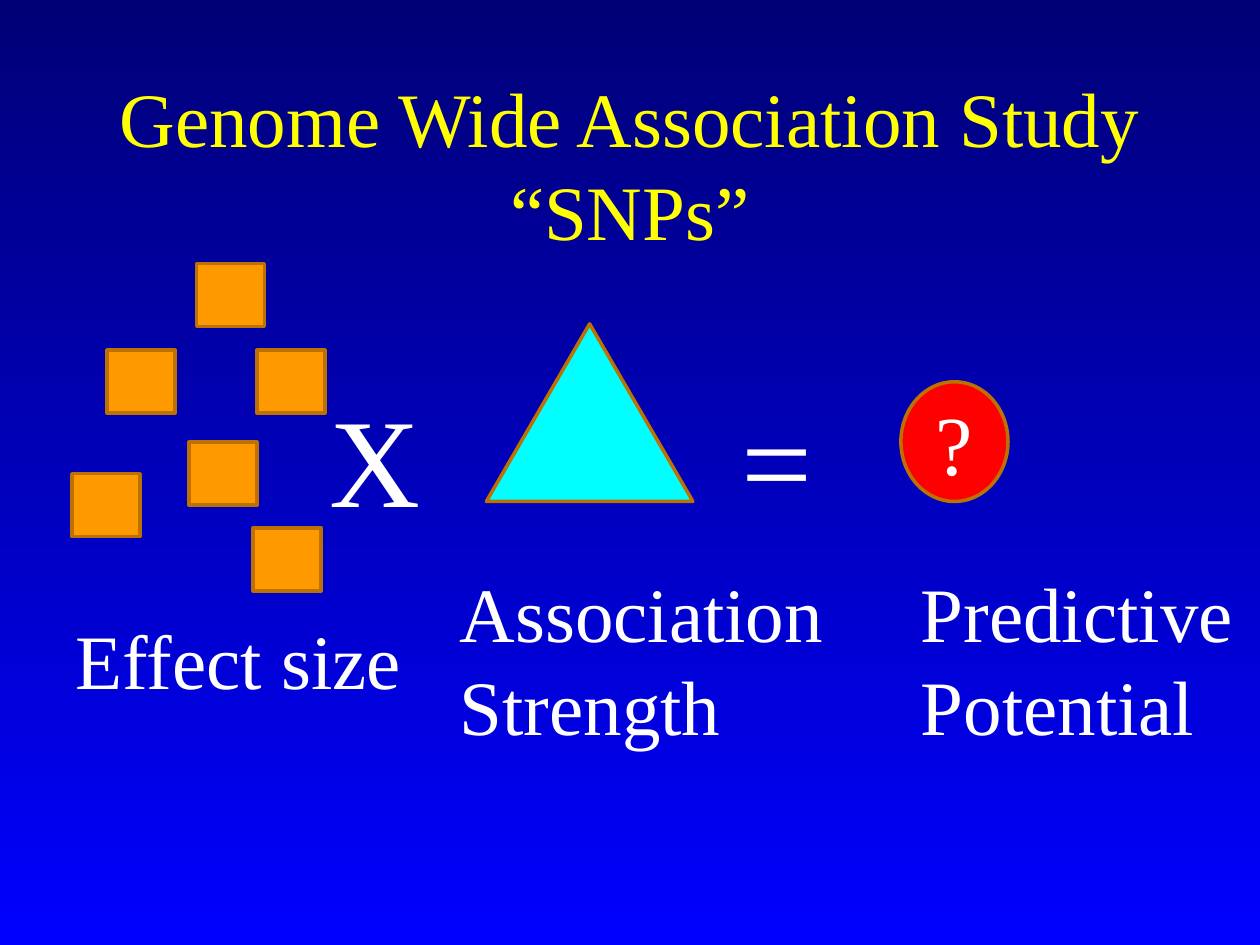
from pptx import Presentation
from pptx.dml.color import RGBColor
from pptx.enum.shapes import MSO_SHAPE as Shape
from pptx.enum.text import MSO_ANCHOR as Anchor, PP_ALIGN as Align
from pptx.util import Inches, Pt

FONT = "Times New Roman"
WHITE, YELLOW, ORANGE, BROWN = "FFFFFF", "FFFF00", "FF9900", "BD7100"
CYAN, RED = "00FFFF", "FF0000"
NAVY, BLUE = "000076", "0000FF"


def color(value):
    return RGBColor.from_string(value)


def write(shape, lines, size, ink=WHITE, align=Align.LEFT, anchor=Anchor.TOP, wrap=False):
    frame = shape.text_frame
    frame.word_wrap = wrap
    frame.vertical_anchor = anchor
    for index, line in enumerate(lines):
        para = frame.paragraphs[0] if index == 0 else frame.add_paragraph()
        para.text = line
        para.alignment = align
        para.font.name = FONT
        para.font.size = Pt(size)
        para.font.color.rgb = color(ink)


def add_label(page, box, lines, size=44, **style):
    label = page.shapes.add_textbox(*map(Inches, box))
    write(label, lines, size, **style)


def add_figure(page, kind, box, fill):
    figure = page.shapes.add_shape(kind, *map(Inches, box))
    figure.shadow.inherit = False
    figure.fill.solid()
    figure.fill.fore_color.rgb = color(fill)
    figure.line.color.rgb = color(BROWN)
    figure.line.width = Pt(2)
    return figure


def paint_background(page):
    fill = page.background.fill
    fill.gradient()
    fill.gradient_angle = 270
    for stop, (position, value) in zip(fill.gradient_stops, ((0, NAVY), (1, BLUE))):
        stop.position = position
        stop.color.rgb = color(value)


def add_snps(page, left, top):
    """Scatter equal squares, with offsets from the top left of the group."""
    offsets = ((0.93, 1.42), (0, 1.67), (1.47, 0.69), (0.99, 0), (0.28, 0.69), (1.44, 2.1))
    for across, down in offsets:
        add_figure(page, Shape.RECTANGLE, (left + across, top + down, 0.54, 0.5), ORANGE)


def add_equation(page):
    # Effect size
    add_snps(page, 0.57, 2.09)
    add_label(page, (0.5, 4.81, 3.06, 0.84), ["Effect size"])
    # Association strength
    add_figure(page, Shape.ISOSCELES_TRIANGLE, (3.86, 2.57, 1.64, 1.41), CYAN)
    add_label(page, (3.55, 4.44, 3.12, 1.58), ["Association", "Strength"])
    # Predictive potential
    result = add_figure(page, Shape.OVAL, (7.15, 3.03, 0.85, 0.95), RED)
    write(result, ["?"], 48, align=Align.CENTER, anchor=Anchor.MIDDLE, wrap=True)
    add_label(page, (7.21, 4.44, 2.7, 1.58), ["Predictive", "Potential"])
    # Operators
    add_label(page, (2.52, 2.98, 1.01, 1.31), ["X"], 72)
    add_label(page, (5.79, 2.98, 0.84, 1.31), ["="], 72)


def main():
    deck = Presentation()
    deck.slide_width, deck.slide_height = Inches(10), Inches(7.5)
    page = deck.slides.add_slide(deck.slide_layouts[6])
    paint_background(page)
    add_label(page, (0.75, 0.67, 8.5, 1.25), ["Genome Wide Association Study\v“SNPs”"],
              ink=YELLOW, align=Align.CENTER, anchor=Anchor.MIDDLE, wrap=True)
    add_equation(page)
    deck.save("out.pptx")


if __name__ == "__main__":
    main()
